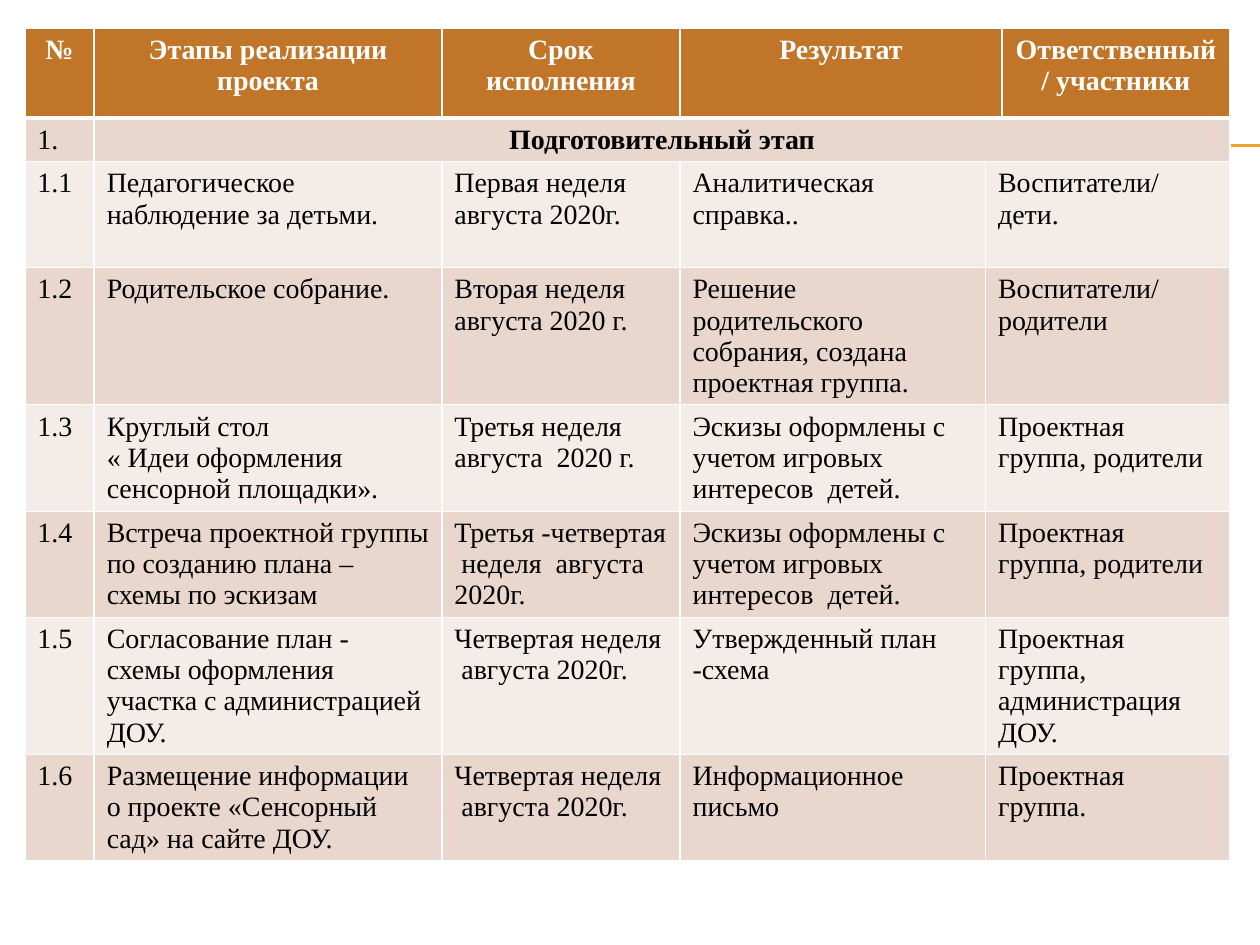
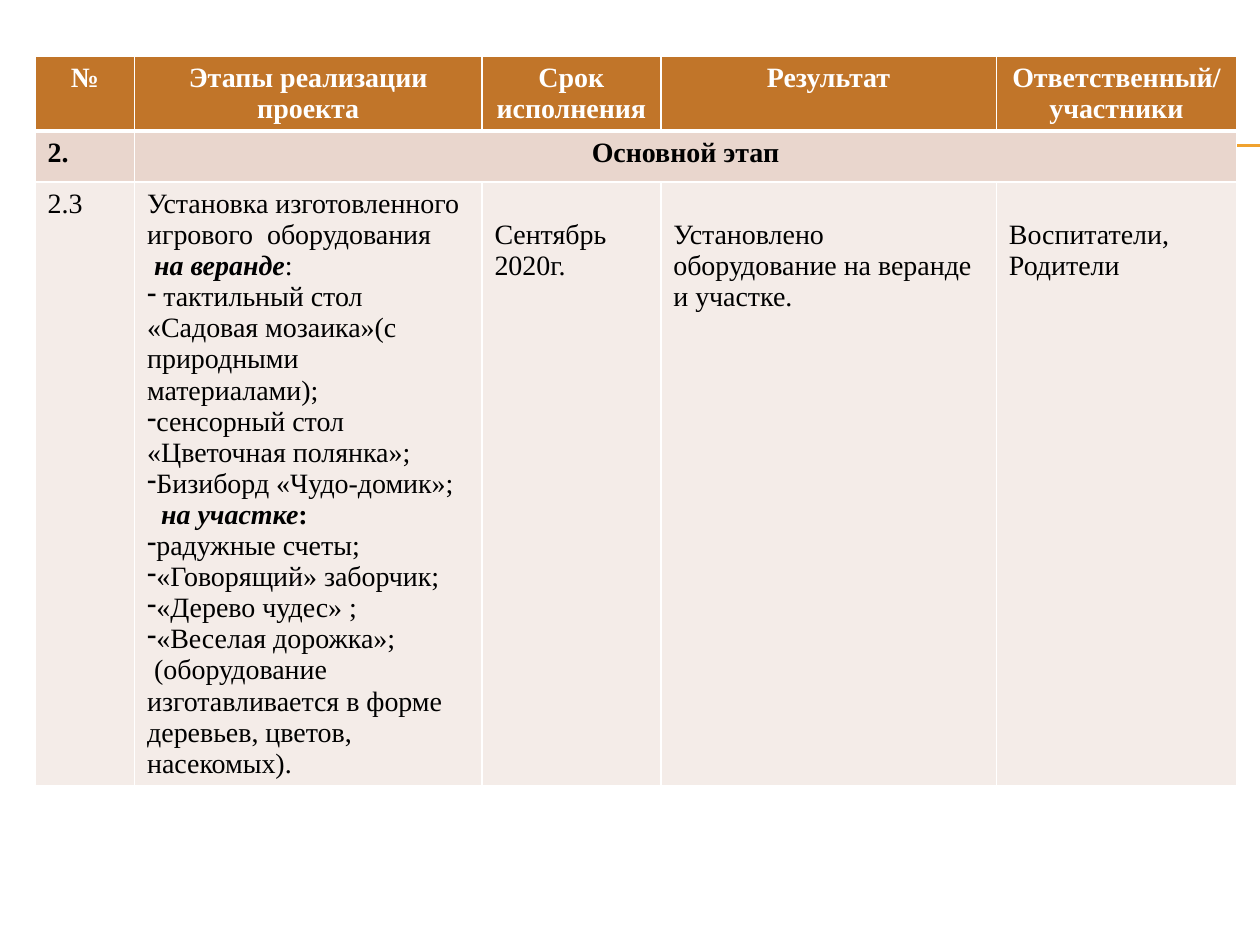
import dataclasses

import pptx
import pptx.dml.color
import pptx.enum.shapes
import pptx.enum.text
import pptx.oxml.ns
import pptx.util
from lxml import etree

Pt = pptx.util.Pt
qn = pptx.oxml.ns.qn


@dataclasses.dataclass
class Line:
    text: str
    emphasis: str = ""
    bullet: bool = False
    first_indent: float = 0
    bold: bool = False


def color(value):
    return pptx.dml.color.RGBColor.from_string(value)


class Deck:
    font = "Times New Roman"
    size = 16
    header_fill = "C17529"
    band_fills = ("E9D6CD", "F4ECE8")
    accent = "F0A22E"
    white = "FFFFFF"
    black = "000000"

    def __init__(self):
        self.presentation = pptx.Presentation()
        self.presentation.slide_width = Pt(720)
        self.presentation.slide_height = Pt(540)
        self.slide = None

    def add_slide(self):
        self.slide = self.presentation.slides.add_slide(self.presentation.slide_layouts[6])
        for y in (82.8, 83.5):
            self.add_rule(40.3, y, 720)

    def add_rule(self, left, y, right):
        straight = pptx.enum.shapes.MSO_CONNECTOR.STRAIGHT
        rule = self.slide.shapes.add_connector(straight, Pt(left), Pt(y), Pt(right), Pt(y))
        rule.line.color.rgb = color(self.accent)
        rule.line.width = Pt(0.75)
        etree.SubElement(rule._element.spPr, qn("a:effectLst"))

    def add_table(self, left, top, widths, heights, merges):
        frame = self.slide.shapes.add_table(
            len(heights), len(widths), Pt(left), Pt(top), Pt(sum(widths)), Pt(sum(heights)))
        table = frame.table
        for column, width in zip(table.columns, widths):
            column.width = Pt(width)
        for row, height in zip(table.rows, heights):
            row.height = Pt(height)
        for row, first, last in merges:
            table.cell(row, first).merge(table.cell(row, last))
        for row in range(len(heights)):
            for column in range(len(widths)):
                self.style_cell(table.cell(row, column), row)
        return table

    def style_cell(self, cell, row):
        properties = cell._tc.get_or_add_tcPr()
        widths = {"lnL": 1, "lnR": 1, "lnT": 3 if row == 1 else 1, "lnB": 3 if row == 0 else 1}
        for side, width in widths.items():
            border = etree.SubElement(properties, qn("a:" + side), w=str(Pt(width)))
            fill = etree.SubElement(border, qn("a:solidFill"))
            etree.SubElement(fill, qn("a:srgbClr"), val=self.white)
        cell.fill.solid()
        cell.fill.fore_color.rgb = color(self.band_fills[(row - 1) % 2] if row else self.header_fill)

    def fill_row(self, table, row, contents, bold=False, centered=(), text_color=black):
        cells = [cell for cell in table.rows[row].cells if not cell.is_spanned]
        for index, (cell, content) in enumerate(zip(cells, contents)):
            lines = content if isinstance(content, list) else [content]
            for number, line in enumerate(lines):
                if isinstance(line, str):
                    line = Line(line, bold=bold)
                frame = cell.text_frame
                paragraph = frame.add_paragraph() if number else frame.paragraphs[0]
                self.write_line(paragraph, line, text_color)
                if index in centered:
                    paragraph.alignment = pptx.enum.text.PP_ALIGN.CENTER

    def write_line(self, paragraph, line, text_color):
        font = paragraph.font
        font.name = self.font
        font.size = Pt(self.size)
        font.color.rgb = color(text_color)
        font.bold = line.bold
        if line.emphasis:
            run = paragraph.add_run()
            run.text = line.emphasis
            run.font.bold = run.font.italic = True
        paragraph.add_run().text = line.text
        properties = paragraph._p.get_or_add_pPr()
        if line.first_indent:
            properties.set("indent", str(Pt(line.first_indent)))
        if line.bullet:
            properties.insert(0, properties.makeelement(qn("a:buChar"), {"char": "-"}))

    def add_stage(self, place, widths, heights, merges, headings, stage, stage_bold, steps):
        self.add_slide()
        table = self.add_table(*place, widths, heights, merges)
        self.fill_row(table, 0, headings, True, range(len(headings)), self.white)
        number, title = stage
        self.fill_row(table, 1, [Line(number, bold=stage_bold), Line(title, bold=True)], centered=(1,))
        for row, step in enumerate(steps, 2):
            self.fill_row(table, row, step)
        return table


HEADINGS = ["№", "Этапы реализации проекта", "Срок исполнения", "Результат", "Ответственный/ участники"]
SKETCHES = "Эскизы оформлены с учетом игровых интересов  детей."
PROJECT_GROUP = "Проектная  группа"
FOURTH_WEEK = ["Четвертая неделя", Line("августа 2020г.", first_indent=4)]

PREPARATION = [
    ["1.1", "Педагогическое наблюдение за детьми.", "Первая неделя августа 2020г.",
     "Аналитическая справка..", "Воспитатели/ дети."],
    ["1.2", "Родительское собрание.", "Вторая неделя августа 2020 г.",
     ["Решение родительского", "собрания, создана проектная группа."], "Воспитатели/родители"],
    ["1.3", ["Круглый стол", "« Идеи оформления сенсорной площадки»."],
     ["Третья неделя", "августа  2020 г."], SKETCHES, PROJECT_GROUP + ", родители"],
    ["1.4", "Встреча проектной группы по созданию плана – схемы по эскизам",
     ["Третья -четвертая", Line("неделя  августа", first_indent=4), "2020г."],
     SKETCHES, PROJECT_GROUP + ", родители"],
    ["1.5", "Согласование план - схемы оформления участка с администрацией ДОУ.",
     FOURTH_WEEK, "Утвержденный план -схема", PROJECT_GROUP + ", администрация ДОУ."],
    ["1.6", "Размещение информации о проекте «Сенсорный сад» на сайте ДОУ.",
     FOURTH_WEEK, "Информационное письмо", PROJECT_GROUP + "."],
]

EQUIPMENT = [
    "Установка изготовленного игрового  оборудования",
    Line(":", emphasis="на веранде", first_indent=4),
    Line(" тактильный стол «Садовая мозаика»(с природными материалами);", bullet=True),
    Line("сенсорный стол «Цветочная полянка»;", bullet=True),
    Line("Бизиборд «Чудо-домик»;", bullet=True),
    Line(":", emphasis="на участке", first_indent=8, bold=True),
    Line("радужные счеты;", bullet=True),
    Line("«Говорящий» заборчик;", bullet=True),
    Line("«Дерево чудес» ;", bullet=True),
    Line("«Веселая дорожка»;", bullet=True),
    Line("(оборудование изготавливается в форме деревьев, цветов, насекомых).", first_indent=4),
]
MAIN_STAGE = [
    ["2.3", EQUIPMENT, "Сентябрь 2020г.", "Установлено оборудование на веранде и участке.",
     ["Воспитатели,", "Родители"]],
]


def main():
    deck = Deck()
    body_merges = [(row, 4, 5) for row in range(2, 8)]
    deck.add_stage(
        (14.2, 16), [39.6, 198.7, 136.1, 174.6, 9.4, 130.3],
        [51.4, 24.6, 60.6, 78.3, 61, 60.6, 78.3, 60.6],
        [(0, 3, 4), (1, 1, 5)] + body_merges,
        HEADINGS, ("1.", "Подготовительный этап"), False, PREPARATION)

    table = deck.add_stage(
        (20, 32), [56.9, 198.5, 102.2, 191.8, 137.2], [42.4, 29.3, 345],
        [(1, 1, 4)], HEADINGS, ("2.", "Основной этап"), True, MAIN_STAGE)
    for column in (2, 3, 4):
        table.cell(2, column).margin_top = Pt(21.4)

    deck.presentation.save("out.pptx")


if __name__ == "__main__":
    main()
